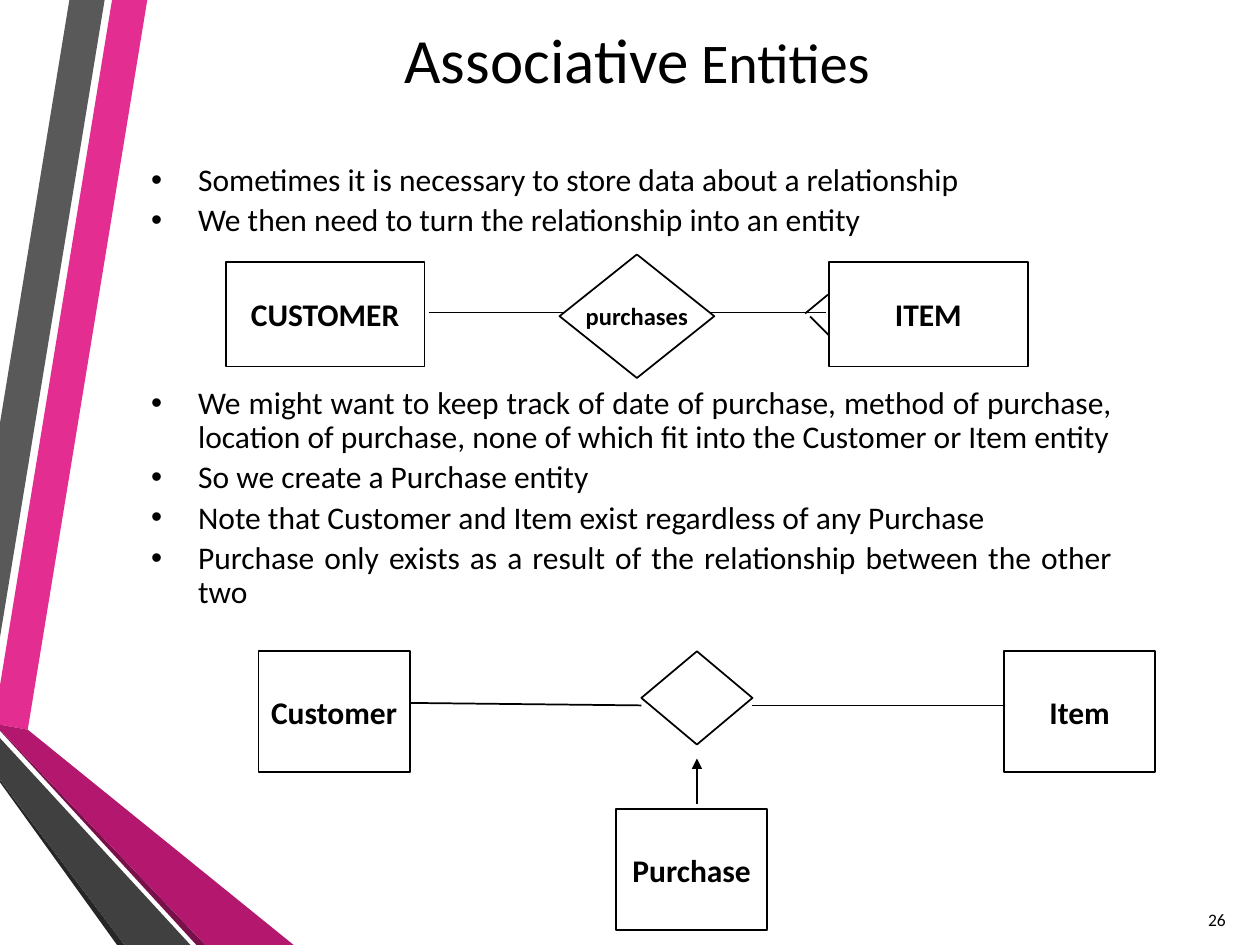
from lxml import etree
from pptx import Presentation
from pptx import util as u
from pptx.dml import color
from pptx.enum import shapes, text
from pptx.oxml import ns


def paint(target, hex_color):
    target.solid()
    target.fore_color.rgb = color.RGBColor.from_string(hex_color)


def write(paragraph, words, size, bold=False):
    run = paragraph.add_run()
    run.text = words
    run.font.name = "Calibri"
    run.font.size = u.Pt(size)
    run.font.bold = bold
    paint(run.font.fill, "000000")


deck = Presentation()
deck.slide_width, deck.slide_height = u.Cm(25.4), u.Cm(19.05)
slide = deck.slides.add_slide(deck.slide_layouts[1])

ribbons = [
    ("E32D91", [(0, 13.82), (0, 14.61), (0.56, 14.71), (2.97, 0), (2.26, 0)]),
    ("595959", [(2.11, 0), (1.4, 0), (0, 8.53), (0, 12.85)]),
    ("262626", [(0, 15.72), (0, 15.77), (2.36, 19.05), (2.51, 19.05)]),
    ("781049", [(0, 14.71), (0, 14.73), (3.96, 19.05), (4.14, 19.05)]),
    ("B4186E", [(0, 14.71), (4.14, 19.05), (5.92, 19.05), (0.56, 14.71), (0, 14.61)]),
    ("404040", [(0, 15.72), (2.51, 19.05), (3.84, 19.05), (0, 14.88)]),
]
for shade, corners in ribbons:
    points = [(u.Cm(x), u.Cm(y)) for x, y in corners]
    outline = slide.shapes.build_freeform(*points[0])
    outline.add_line_segments(points[1:], close=True)
    ribbon = outline.convert_to_shape()
    ribbon.shadow.inherit = False
    paint(ribbon.fill, shade)
    ribbon.line.fill.background()

title = slide.shapes.title
title.left, title.top, title.width, title.height = map(u.Cm, (2.9, 0.51, 19.89, 1.52))
title.text_frame.auto_size = text.MSO_AUTO_SIZE.NONE
title.text_frame.vertical_anchor = text.MSO_ANCHOR.MIDDLE
heading = title.text_frame.paragraphs[0]
heading.alignment = text.PP_ALIGN.CENTER
heading.line_spacing = 0.9
write(heading, "Associative", 36)
write(heading, " Entities", 32)

body = slide.placeholders[1]
body.left, body.top, body.width, body.height = map(u.Cm, (2.79, 3.18, 19.89, 9.4))
body.text_frame.auto_size = text.MSO_AUTO_SIZE.NONE
body.text_frame.vertical_anchor = text.MSO_ANCHOR.TOP
points_made = [
    (0, "Sometimes it is necessary to store data about a relationship"),
    (3.6, "We then need to turn the relationship into an entity"),
    (85, "We might want to keep track of date of purchase, method of purchase, "
         "location of purchase, none of which fit into the Customer or Item entity"),
    (3.6, "So we create a Purchase entity"),
    (3.6, "Note that Customer and Item exist regardless of any Purchase"),
    (3.6, "Purchase only exists as a result of the relationship between the other two"),
]
for index, (gap, sentence) in enumerate(points_made):
    bullet = body.text_frame.paragraphs[0] if index == 0 else body.text_frame.add_paragraph()
    bullet.alignment = text.PP_ALIGN.JUSTIFY
    bullet.line_spacing = 0.9
    bullet.space_before = u.Pt(gap)
    props = bullet._p.get_or_add_pPr()
    props.set("marL", str(u.Cm(0.95)))
    props.set("indent", str(-u.Cm(0.95)))
    etree.SubElement(props, ns.qn("a:buFont"), typeface="Arial")
    etree.SubElement(props, ns.qn("a:buChar"), char="•")
    write(bullet, sentence, 18)

links = [
    (8.64, 6.3, 16.66, 6.3),
    (16.69, 5.94, 16.23, 6.32),
    (16.33, 6.38, 16.71, 6.76),
    (12.93, 14.22, 8.26, 14.17),
    (15.16, 14.22, 20.27, 14.22),
    (14.05, 16.21, 14.05, 15.29),
]
for ends in links:
    link = slide.shapes.add_connector(shapes.MSO_CONNECTOR.STRAIGHT, *map(u.Cm, ends))
    paint(link.line.fill, "000000")
    link.line.width = u.Pt(1)
    etree.SubElement(link._element.spPr, ns.qn("a:effectLst"))
arrow_line = link.line._get_or_add_ln()
etree.SubElement(arrow_line, ns.qn("a:tailEnd"), type="triangle")

box, diamond = shapes.MSO_SHAPE.RECTANGLE, shapes.MSO_SHAPE.DIAMOND
nodes = [
    (box, "CUSTOMER", 18, (4.55, 5.28, 4.01, 2.11)),
    (box, "ITEM", 18, (16.71, 5.28, 4.01, 2.11)),
    (diamond, "purchases", 14, (11.28, 5.13, 3.12, 2.49)),
    (box, "Customer", 18, (5.21, 13.13, 3.05, 2.44)),
    (box, "Item", 18, (20.24, 13.13, 3.05, 2.44)),
    (box, "Purchase", 18, (12.42, 16.31, 3.05, 2.44)),
    (diamond, "", 14, (12.93, 13.13, 2.24, 1.88)),
]
for kind, label, size, place in nodes:
    node = slide.shapes.add_shape(kind, *map(u.Cm, place))
    node.shadow.inherit = False
    paint(node.fill, "FFFFFF")
    paint(node.line.fill, "000000")
    node.line.width = u.Pt(1)
    if label:
        node.text_frame.word_wrap = False
        node.text_frame.vertical_anchor = text.MSO_ANCHOR.MIDDLE
        node.text_frame.paragraphs[0].alignment = text.PP_ALIGN.CENTER
        write(node.text_frame.paragraphs[0], label, size, bold=True)

page_number = slide.shapes.add_textbox(*map(u.Cm, (23.77, 18.03, 1.19, 1.02)))
page_number.text_frame.word_wrap = True
page_number.text_frame.vertical_anchor = text.MSO_ANCHOR.MIDDLE
page_number.text_frame.paragraphs[0].alignment = text.PP_ALIGN.RIGHT
write(page_number.text_frame.paragraphs[0], "26", 10)

deck.save("out.pptx")
